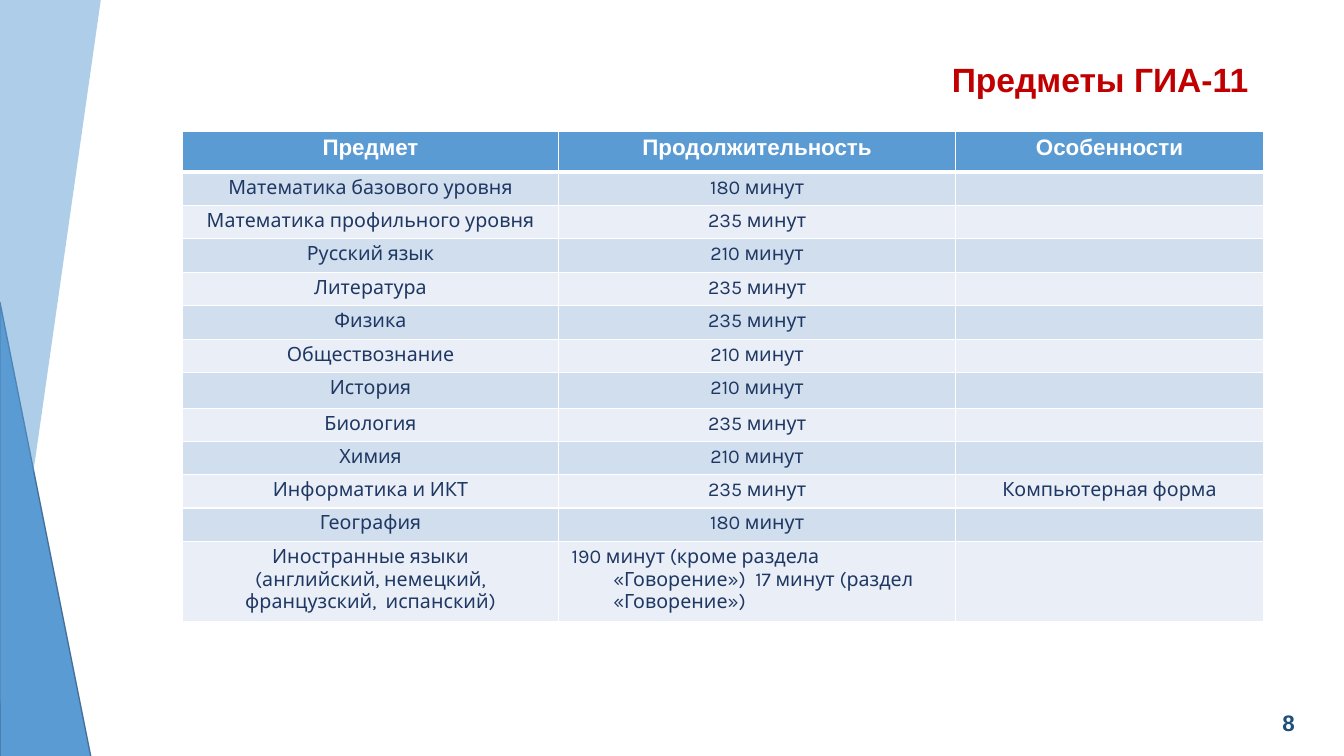
from lxml import etree
from pptx import Presentation
from pptx.dml.color import RGBColor
from pptx.enum import text
from pptx.oxml import ns
from pptx.util import Inches, Pt

BLUE, NAVY, WHITE = "5B9BD4", "1F3863", "FFFFFF"
BANDS = ("D0DEEE", "E9EEF7")

HEADERS = ("Предмет", "Продолжительность", "Особенности")
EXAMS = [
    ("Математика базового уровня", "180 минут", ""),
    ("Математика профильного уровня", "235 минут", ""),
    ("Русский язык", "210 минут", ""),
    ("Литература", "235 минут", ""),
    ("Физика", "235 минут", ""),
    ("Обществознание", "210 минут", ""),
    ("История", "210 минут", ""),
    ("Биология", "235 минут", ""),
    ("Химия", "210 минут", ""),
    ("Информатика и ИКТ", "235 минут", "Компьютерная форма"),
    ("География", "180 минут", ""),
    ("Иностранные языки\n(английский, немецкий, французский,  испанский)",
     "190 минут (кроме раздела «Говорение»)  17 минут (раздел «Говорение»)", ""),
]
COLUMN_WIDTHS = (3.73, 3.94, 3.05)
ROW_HEIGHTS = [0.41] + [0.33] * 4 + [0.34, 0.33, 0.35] + [0.33] * 4 + [0.8]


def color(value):
    return RGBColor.from_string(value)


def style(p, size, value, name="Arial", bold=True):
    p.font.size, p.font.name, p.font.bold = Pt(size), name, bold
    p.font.color.rgb = color(value)


def indent(p, left, first=0, right=0):
    pPr = p._p.get_or_add_pPr()
    for key, length in (("marL", left), ("marR", right), ("indent", first)):
        pPr.set(key, str(Inches(length)))


def add_triangle(slide, points, fill, alpha=None, line=None):
    builder = slide.shapes.build_freeform(*points[0], scale=Inches(1))
    builder.add_line_segments(points[1:], close=True)
    sp = builder.convert_to_shape()
    sp.shadow.inherit = False
    sp.fill.solid()
    sp.fill.fore_color.rgb = color(fill)
    if alpha:
        srgb = sp.fill._xPr.find(".//" + ns.qn("a:srgbClr"))
        etree.SubElement(srgb, ns.qn("a:alpha"), val=str(alpha * 1000))
    if line:
        sp.line.color.rgb = color(line)
        sp.line.width = Pt(0.96)
    else:
        sp.line.fill.background()


def add_side_decor(slide, width, height):
    add_triangle(slide, [(0, 2.54), (0, height), (width, height)], BLUE, line="42709B")
    add_triangle(slide, [(width, 0), (0, 0), (0, 6.88)], BLUE, alpha=49)


def add_label(slide, box, content, size, value, left=0.0):
    tf = slide.shapes.add_textbox(*map(Inches, box)).text_frame
    tf.word_wrap = True
    tf.margin_left = tf.margin_top = tf.margin_right = tf.margin_bottom = 0
    p = tf.paragraphs[0]
    p.text = content
    style(p, size, value)
    indent(p, left)
    return p


def set_borders(cell, widths):
    tcPr = cell._tc.get_or_add_tcPr()
    for i, (side, width) in enumerate(widths.items()):
        ln = etree.Element(ns.qn("a:ln" + side), w=str(Pt(width)))
        solid = etree.SubElement(ln, ns.qn("a:solidFill"))
        etree.SubElement(solid, ns.qn("a:srgbClr"), val=WHITE)
        tcPr.insert(i, ln)


def fill_cell(cell, content, row):
    cell.margin_left = cell.margin_right = cell.margin_bottom = 0
    cell.margin_top = Inches(0.04)
    cell.fill.solid()
    cell.fill.fore_color.rgb = color(BANDS[(row - 1) % 2] if row else BLUE)
    # A thick rule separates the header from the body
    set_borders(cell, {"L": 1, "R": 1, "T": 3 if row == 1 else 1, "B": 1 if row else 3})
    cell.text = content
    for i, p in enumerate(cell.text_frame.paragraphs):
        p.alignment = text.PP_ALIGN.CENTER
        p.space_before = Pt(0 if i else 3.2)
        if row:
            style(p, 14, NAVY, "Karla", False)
        else:
            style(p, 16, WHITE)


def add_exam_table(slide, left, top):
    rows = [HEADERS] + EXAMS
    frame = slide.shapes.add_table(
        len(rows), len(HEADERS), Inches(left), Inches(top),
        Inches(sum(COLUMN_WIDTHS)), Inches(sum(ROW_HEIGHTS)))
    table = frame.table
    table.first_row = table.horz_banding = False
    for column, width in zip(table.columns, COLUMN_WIDTHS):
        column.width = Inches(width)
    for r, (height, contents) in enumerate(zip(ROW_HEIGHTS, rows)):
        table.rows[r].height = Inches(height)
        for c, content in enumerate(contents):
            fill_cell(table.cell(r, c), content, r)

    # Foreign languages: indented list and hanging duration
    last = len(rows) - 1
    indent(table.cell(last, 0).text_frame.paragraphs[1], 0.16, right=0.16)
    duration = table.cell(last, 1).text_frame.paragraphs[0]
    duration.alignment = text.PP_ALIGN.LEFT
    indent(duration, 0.54, -0.41, 0.16)


def main():
    prs = Presentation()
    prs.slide_width, prs.slide_height = Inches(13.33), Inches(7.5)
    slide = prs.slides.add_slide(prs.slide_layouts[6])

    add_side_decor(slide, 1.42, 7.5)
    # Title
    add_label(slide, (9.43, 0.58, 2.99, 0.43), "Предметы ГИА-11", 24, "C00000", 0.01)
    # Page number
    number = add_label(slide, (12.68, 7.04, 0.33, 0.28), "8", 16, "1E4E79", 0.04)
    number.line_spacing = Pt(18.6)
    add_exam_table(slide, 1.81, 1.3)

    prs.save("out.pptx")


if __name__ == "__main__":
    main()
